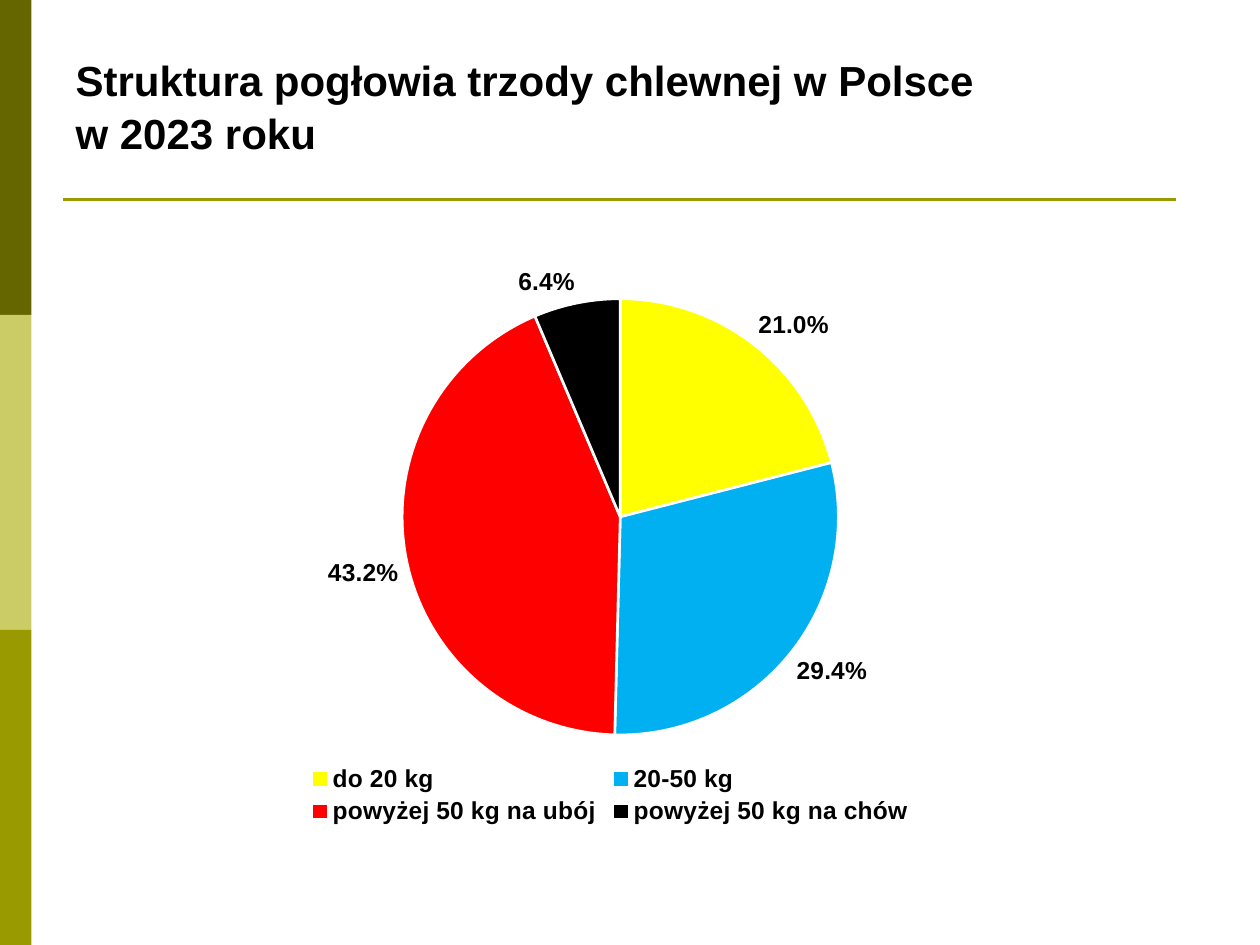
from dataclasses import dataclass

from lxml import etree
from pptx import Presentation
from pptx.chart.data import CategoryChartData
from pptx.dml.color import RGBColor
from pptx.enum.chart import XL_CHART_TYPE, XL_LABEL_POSITION, XL_LEGEND_POSITION
from pptx.enum.shapes import MSO_CONNECTOR, MSO_SHAPE
from pptx.enum.text import MSO_ANCHOR, PP_ALIGN
from pptx.oxml.ns import qn
from pptx.util import Pt

PIE = XL_CHART_TYPE.PIE
OUTSIDE_END = XL_LABEL_POSITION.OUTSIDE_END
BOTTOM = XL_LEGEND_POSITION.BOTTOM
STRAIGHT = MSO_CONNECTOR.STRAIGHT
RECTANGLE = MSO_SHAPE.RECTANGLE
ANCHOR_BOTTOM = MSO_ANCHOR.BOTTOM
LEFT = PP_ALIGN.LEFT


@dataclass(frozen=True)
class Theme:
    font: str = "Arial"
    title_size: int = 24
    chart_size: int = 14
    text: str = "000000"
    rule: str = "999900"
    slice_edge: str = "FFFFFF"
    bands: tuple = ("666600", "CCCC66", "999900")
    slices: tuple = ("FFFF00", "00B0F0", "FF0000", "000000")


THEME = Theme()
HERD = {
    "do 20 kg": 0.21,
    "20-50 kg": 0.294,
    "powyżej 50 kg na ubój": 0.432,
    "powyżej 50 kg na chów": 0.064,
}


def color(value):
    return RGBColor.from_string(value)


def style_font(font, size):
    font.name = THEME.font
    font.size = Pt(size)
    font.bold = True
    font.color.rgb = color(THEME.text)


def add_side_bands(slide):
    height = 180
    for index, fill in enumerate(THEME.bands):
        band = slide.shapes.add_shape(
            RECTANGLE, Pt(0), Pt(index * height), Pt(18), Pt(height))
        band.shadow.inherit = False
        band.fill.solid()
        band.fill.fore_color.rgb = color(fill)
        band.line.fill.background()


def add_rule(slide):
    rule = slide.shapes.add_connector(
        STRAIGHT, Pt(36), Pt(114), Pt(672), Pt(114))
    rule.line.color.rgb = color(THEME.rule)
    rule.line.width = Pt(1.5)
    etree.SubElement(rule._element.spPr, qn("a:effectLst"))


def set_title(slide, wording):
    title = slide.shapes.title
    title.left, title.top, title.width, title.height = (
        Pt(36), Pt(21.6), Pt(648), Pt(72))
    frame = title.text_frame
    frame.text = wording
    frame.word_wrap = True
    frame.vertical_anchor = ANCHOR_BOTTOM
    paragraph = frame.paragraphs[0]
    paragraph.alignment = LEFT
    paragraph.line_spacing = 1.05
    style_font(paragraph.font, THEME.title_size)


def place(layout, x, y, w, h, inner=False):
    """Fix a chart part at fractions of the chart area."""
    manual = etree.SubElement(layout, qn("c:manualLayout"))
    settings = {"layoutTarget": "inner"} if inner else {}
    settings.update(xMode="edge", yMode="edge", x=x, y=y, w=w, h=h)
    for tag, value in settings.items():
        etree.SubElement(manual, qn(f"c:{tag}")).set("val", str(value))


def add_herd_pie(slide):
    herd = CategoryChartData(number_format="0.0%")
    herd.categories = list(HERD)
    herd.add_series("Series 1", list(HERD.values()))
    chart = slide.shapes.add_chart(
        PIE, Pt(65.5), Pt(139.7), Pt(566.6), Pt(334.8), herd).chart
    chart.has_title = False
    style_font(chart.font, THEME.chart_size)

    # Slices
    plot = chart.plots[0]
    plot.vary_by_categories = True
    for index, fill in enumerate(THEME.slices):
        part = plot.series[0].points[index].format
        part.fill.solid()
        part.fill.fore_color.rgb = color(fill)
        part.line.color.rgb = color(THEME.slice_edge)
        part.line.width = Pt(1.5)

    # Percentages
    plot.has_data_labels = True
    labels = plot.data_labels
    labels.show_value = True
    labels.show_percentage = False
    labels.number_format = "0.0%"
    labels.number_format_is_linked = False
    labels.position = OUTSIDE_END
    style_font(labels.font, THEME.chart_size)

    # Legend
    chart.has_legend = True
    legend = chart.legend
    legend.position = BOTTOM
    legend.include_in_layout = False
    style_font(legend.font, THEME.chart_size)

    # Placement of pie and legend
    plot_area = chart._chartSpace.chart.plotArea
    pie_layout = plot_area.find(qn("c:layout"))
    if pie_layout is None:
        pie_layout = etree.Element(qn("c:layout"))
        plot_area.insert(0, pie_layout)
    place(pie_layout, 0.29, 0.09, 0.44, 0.75, inner=True)
    legend_layout = legend._element.find(qn("c:layout"))
    if legend_layout is None:
        legend_layout = etree.Element(qn("c:layout"))
        legend._element.find(qn("c:legendPos")).addnext(legend_layout)
    place(legend_layout, 0.19, 0.88, 0.62, 0.12)


def main():
    deck = Presentation()
    deck.slide_width, deck.slide_height = Pt(720), Pt(540)
    slide = deck.slides.add_slide(deck.slide_layouts[5])
    add_side_bands(slide)
    add_rule(slide)
    set_title(slide, "Struktura pogłowia trzody chlewnej w Polsce \vw 2023 roku")
    add_herd_pie(slide)
    deck.save("out.pptx")


if __name__ == "__main__":
    main()
